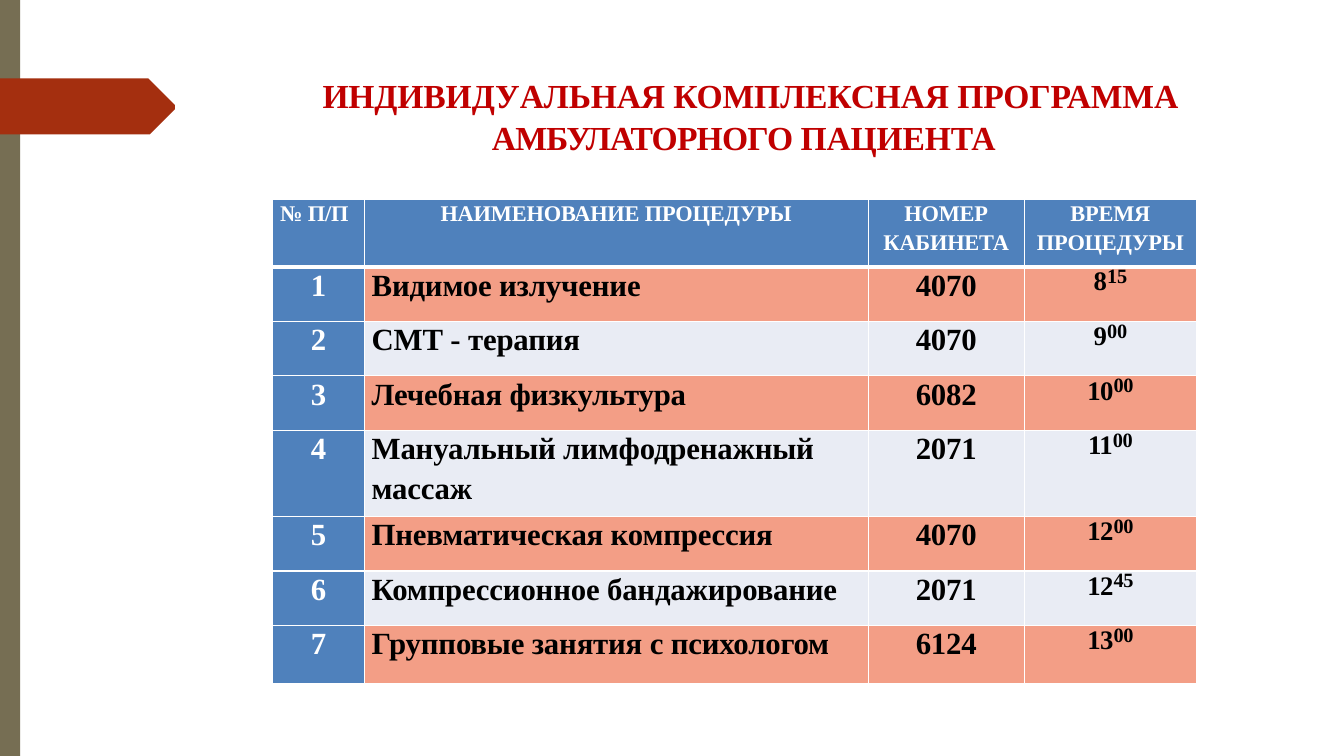
from lxml import etree
from pptx import Presentation
from pptx.dml.color import RGBColor
from pptx.enum.shapes import MSO_SHAPE
from pptx.enum.text import MSO_ANCHOR, MSO_AUTO_SIZE, PP_ALIGN
from pptx.oxml.ns import qn
from pptx.util import Pt

RECT = MSO_SHAPE.RECTANGLE
TOP = MSO_ANCHOR.TOP
GROW = MSO_AUTO_SIZE.SHAPE_TO_FIT_TEXT
LEFT, CENTER = PP_ALIGN.LEFT, PP_ALIGN.CENTER
HUES = {"bar": "766E53", "arrow": "A42F0F", "title": "C00000", "head": "4F81BC",
        "odd": "F39E86", "even": "E9ECF4", "white": "FFFFFF", "black": "000000"}


def write(para, text, size, hue, track=0, base=0):
    run = para.add_run()
    run.text = text
    font = run.font
    font.name = "Times New Roman"
    font.size = Pt(size)
    font.bold = True
    font.color.rgb = RGBColor.from_string(HUES[hue])
    props = run._r.get_or_add_rPr()
    if track:
        props.set("spc", str(round(track * 100)))
    if base:
        props.set("baseline", str(base * 1000))


def edge(cell, widths):
    props = cell._tc.get_or_add_tcPr()
    for spot, (side, width) in enumerate(zip("LRTB", widths)):
        line = etree.Element(qn(f"a:ln{side}"), w=str(Pt(width)))
        fill = etree.SubElement(line, qn("a:solidFill"))
        etree.SubElement(fill, qn("a:srgbClr"), val=HUES["white"])
        props.insert(spot, line)


deck = Presentation()
deck.slide_width, deck.slide_height = Pt(960), Pt(540)
slide = deck.slides.add_slide(deck.slide_layouts[5])
shapes = slide.shapes

bar = shapes.add_shape(RECT, 0, 0, Pt(14.4), Pt(540))
path = shapes.build_freeform(0, 56.2, scale=Pt(1))
path.add_line_segments([(0, 95.8), (98, 96.3), (106, 96.3), (107, 95.6),
                        (124.8, 77.8), (125.4, 76.3), (124.8, 74.8),
                        (107, 57), (105.8, 56.2)], close=True)
arrow = path.convert_to_shape()
for shape, hue in ((bar, "bar"), (arrow, "arrow")):
    shape.shadow.inherit = False
    shape.fill.solid()
    shape.fill.fore_color.rgb = RGBColor.from_string(HUES[hue])
    shape.line.fill.background()

title = shapes.title
title.left, title.top, title.width, title.height = Pt(229.7), Pt(51.1), Pt(612), Pt(59.8)
frame = title.text_frame
frame.margin_left = frame.margin_right = frame.margin_bottom = 0
frame.margin_top = Pt(1)
frame.vertical_anchor = TOP
frame.word_wrap = True
frame.auto_size = GROW
para = frame.paragraphs[0]
para.alignment = LEFT
para.line_spacing = 1.05
props = para._p.get_or_add_pPr()
props.set("marL", str(Pt(121.7)))
props.set("indent", str(Pt(-121)))
for text, track in (("ИНДИВИ", -0.1), ("Д", 0.2), ("У", -4.8),
                    ("АЛЬНАЯ КОМПЛЕКСНАЯ ПРОГРАММА ", -0.1),
                    ("АМБУЛАТОРНОГО ", -0.6), ("ПАЦИЕНТА", -0.1)):
    write(para, text, 24, "title", track)

heads = [["№ П/П"], ["НАИМЕНОВАНИЕ ПРОЦЕДУРЫ"], ["НОМЕР", "КАБИНЕТА"], ["ВРЕМЯ", "ПРОЦЕДУРЫ"]]
plan = [
    (["Видимое излучение"], "4070", "8", "15"),
    (["СМТ - терапия"], "4070", "9", "00"),
    (["Лечебная физкультура"], "6082", "10", "00"),
    (["Мануальный лимфодренажный", "массаж"], "2071", "11", "00"),
    (["Пневматическая компрессия"], "4070", "12", "00"),
    (["Компрессионное бандажирование"], "2071", "12", "45"),
    (["Групповые занятия с психологом"], "6124", "13", "00"),
]
rows = [heads] + [[[str(num)], name, [room], [(hour, mins)]]
                  for num, (name, room, hour, mins) in enumerate(plan, 1)]
wide = [65.4, 360, 111.5, 123]
high = [48, 39, 39, 39, 61.4, 39, 39, 41.4]

table = shapes.add_table(len(rows), len(wide), Pt(194.8), Pt(142.5),
                         Pt(sum(wide)), Pt(sum(high))).table
table.first_row = table.horz_banding = False
for col, width in zip(table.columns, wide):
    col.width = Pt(width)
for row, height in zip(table.rows, high):
    row.height = Pt(height)

for r, row in enumerate(rows):
    for c, lines in enumerate(row):
        cell = table.cell(r, c)
        head = r == 0 or c == 0
        time = r > 0 and c == 3
        cell.margin_left = cell.margin_right = cell.margin_bottom = 0
        cell.margin_top = 0 if time else Pt(1.4)
        cell.vertical_anchor = TOP
        cell.fill.solid()
        hue = "head" if head else "odd" if r % 2 else "even"
        cell.fill.fore_color.rgb = RGBColor.from_string(HUES[hue])
        edge(cell, (1, 1, 3 if r == 1 else 1, 3 if r == 0 else 1))
        ink = "white" if head else "black"
        inset = (r == 0 and c == 0) or (r > 0 and c == 1)
        for i, line in enumerate(lines):
            para = cell.text_frame.paragraphs[0] if i == 0 else cell.text_frame.add_paragraph()
            para.alignment = LEFT if inset else CENTER
            if inset:
                para._p.get_or_add_pPr().set("marL", str(Pt(5.3)))
            if time:
                para.line_spacing = Pt(21.4)
                write(para, line[0], 33, ink, -0.3, -16)
                write(para, line[1], 14.5, ink, -0.2)
                continue
            if i:
                para.space_before = Pt(4 if r else 2.9)
            write(para, line, 22 if r else 16, ink, -0.1)

deck.save("out.pptx")
